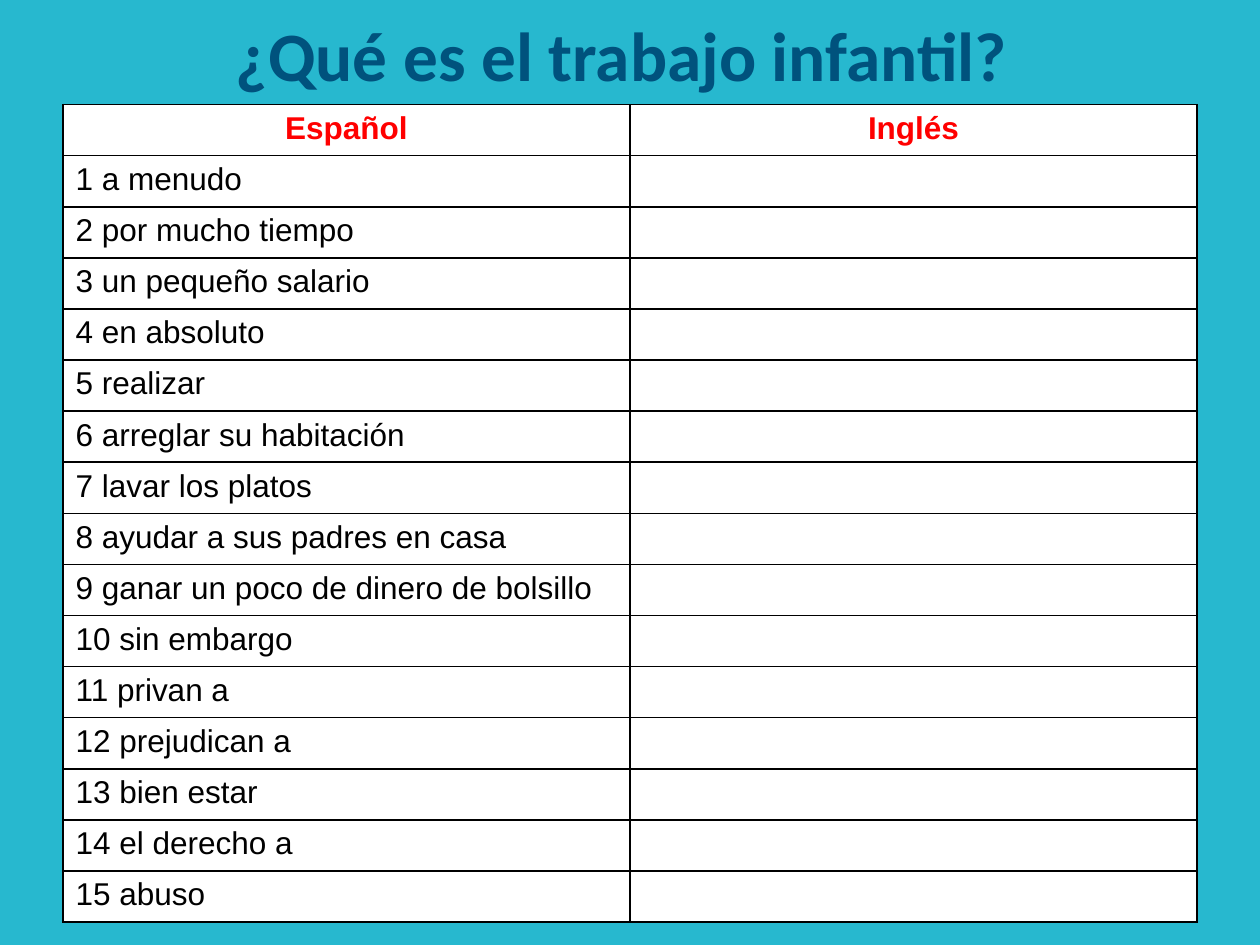
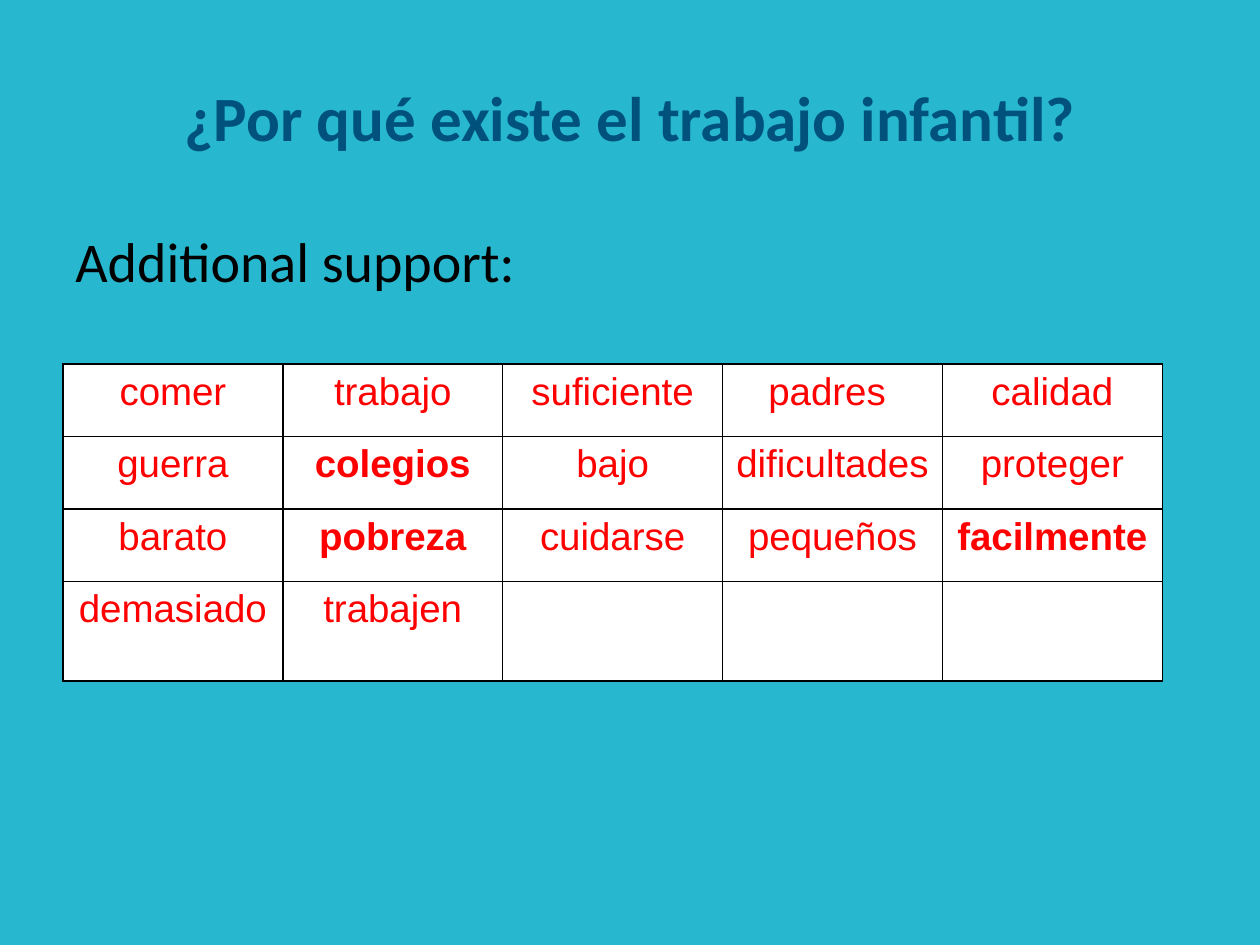
import pptx
import pptx.util
import pptx.dml.color
import pptx.enum.text
import pptx.oxml.ns
import lxml.etree

Inches, Pt = pptx.util.Inches, pptx.util.Pt
PP_ALIGN = pptx.enum.text.PP_ALIGN
MSO_ANCHOR = pptx.enum.text.MSO_ANCHOR

COLORS = {
    "background": "27B8CF",
    "title": "00527D",
    "accent": "FF0000",
    "text": "000000",
    "cell": "FFFFFF",
    "border": "000000",
}

VOCABULARY = [
    "a menudo", "por mucho tiempo", "un pequeño salario", "en absoluto",
    "realizar", "arreglar su habitación", "lavar los platos",
    "ayudar a sus padres en casa", "ganar un poco de dinero de bolsillo",
    "sin embargo", "privan a", "prejudican a", "bien estar",
    "el derecho a", "abuso",
]

WORD_BANK = [
    ["comer", "trabajo", "suficiente", "padres ", "calidad"],
    ["guerra", "colegios", "bajo", "dificultades", "proteger"],
    ["barato", "pobreza", "cuidarse", "pequeños", "facilmente"],
    ["demasiado", "trabajen", "", "", ""],
]
BOLD_WORDS = {"colegios", "pobreza", "facilmente"}


def rgb(name):
    return pptx.dml.color.RGBColor.from_string(COLORS[name])


def style_paragraph(p, font, size, color, bold=False, align=PP_ALIGN.LEFT):
    p.alignment = align
    for r in p.runs:
        r.font.name = font
        r.font.size = Pt(size)
        r.font.bold = bold
        r.font.color.rgb = rgb(color)


def add_title(slide, text, box, size, anchor, inset):
    title = slide.shapes.title
    title.left, title.top, title.width, title.height = map(Inches, box)
    tf = title.text_frame
    tf.text = text
    tf.word_wrap = True
    tf.auto_size = pptx.enum.text.MSO_AUTO_SIZE.NONE
    tf.vertical_anchor = anchor
    tf.margin_top = tf.margin_bottom = Inches(inset)
    style_paragraph(tf.paragraphs[0], "Calibri", size, "title", True, PP_ALIGN.CENTER)


def set_borders(cell):
    tc_pr = cell._tc.get_or_add_tcPr()
    qn = pptx.oxml.ns.qn
    for side in ("a:lnL", "a:lnR", "a:lnT", "a:lnB"):
        ln = lxml.etree.SubElement(tc_pr, qn(side), w=str(Pt(1)))
        fill = lxml.etree.SubElement(ln, qn("a:solidFill"))
        lxml.etree.SubElement(fill, qn("a:srgbClr"), val=COLORS["border"])


def add_grid(slide, rows, left, top, col_width, row_heights, style_cell):
    """Add a bordered white table; style_cell formats a paragraph by row and text."""
    n_cols = len(rows[0])
    table = slide.shapes.add_table(
        len(rows), n_cols, Inches(left), Inches(top),
        Inches(col_width * n_cols), Inches(sum(row_heights))).table
    table.first_row = table.horz_banding = False
    for col in table.columns:
        col.width = Inches(col_width)
    for i, (words, height) in enumerate(zip(rows, row_heights)):
        table.rows[i].height = Inches(height)
        for j, word in enumerate(words):
            cell = table.cell(i, j)
            set_borders(cell)
            cell.fill.solid()
            cell.fill.fore_color.rgb = rgb("cell")
            if word:
                cell.text = word
                style_cell(cell.text_frame.paragraphs[0], i, word)


def style_vocabulary(p, row, word):
    if row == 0:
        style_paragraph(p, "Arial", 18, "accent", True, PP_ALIGN.CENTER)
    else:
        style_paragraph(p, "Arial", 18, "text")


def style_word_bank(p, row, word):
    style_paragraph(p, "Arial", 22, "accent", word in BOLD_WORDS, PP_ALIGN.CENTER)


def add_support_heading(slide, box):
    tf = slide.shapes.add_textbox(*map(Inches, box)).text_frame
    tf.word_wrap = True
    tf.text = "Additional support:"
    style_paragraph(tf.paragraphs[0], "Calibri", 32, "text")


def build_vocabulary_slide(slide):
    add_title(slide, "¿Qué es el trabajo infantil?", (0, 0, 9.87, 0.83),
              39.6, MSO_ANCHOR.TOP, 0.1)
    # Header row, then numbered words beside blank cells for the translation
    rows = [["Español", "Inglés"]]
    rows += [[f"{n} {word}", ""] for n, word in enumerate(VOCABULARY, 1)]
    add_grid(slide, rows, 0.5, 0.83, 4.5, [6.49 / len(rows)] * len(rows),
             style_vocabulary)


def build_word_bank_slide(slide):
    add_title(slide, "¿Por qué existe el trabajo infantil?", (0.5, 0.3, 9, 1.25),
              36, MSO_ANCHOR.MIDDLE, 0.05)
    add_support_heading(slide, (0.5, 1.75, 9, 4.95))
    # The last row is taller than the others
    add_grid(slide, WORD_BANK, 0.5, 2.89, 1.745, [0.575] * 3 + [0.79],
             style_word_bank)


def main():
    prs = pptx.Presentation()
    prs.slide_width, prs.slide_height = Inches(10), Inches(7.5)

    # Shared background
    background = prs.slide_master.background.fill
    background.solid()
    background.fore_color.rgb = rgb("background")

    title_only = prs.slide_layouts[5]
    for build in (build_vocabulary_slide, build_word_bank_slide):
        build(prs.slides.add_slide(title_only))
    prs.save("out.pptx")


if __name__ == "__main__":
    main()
